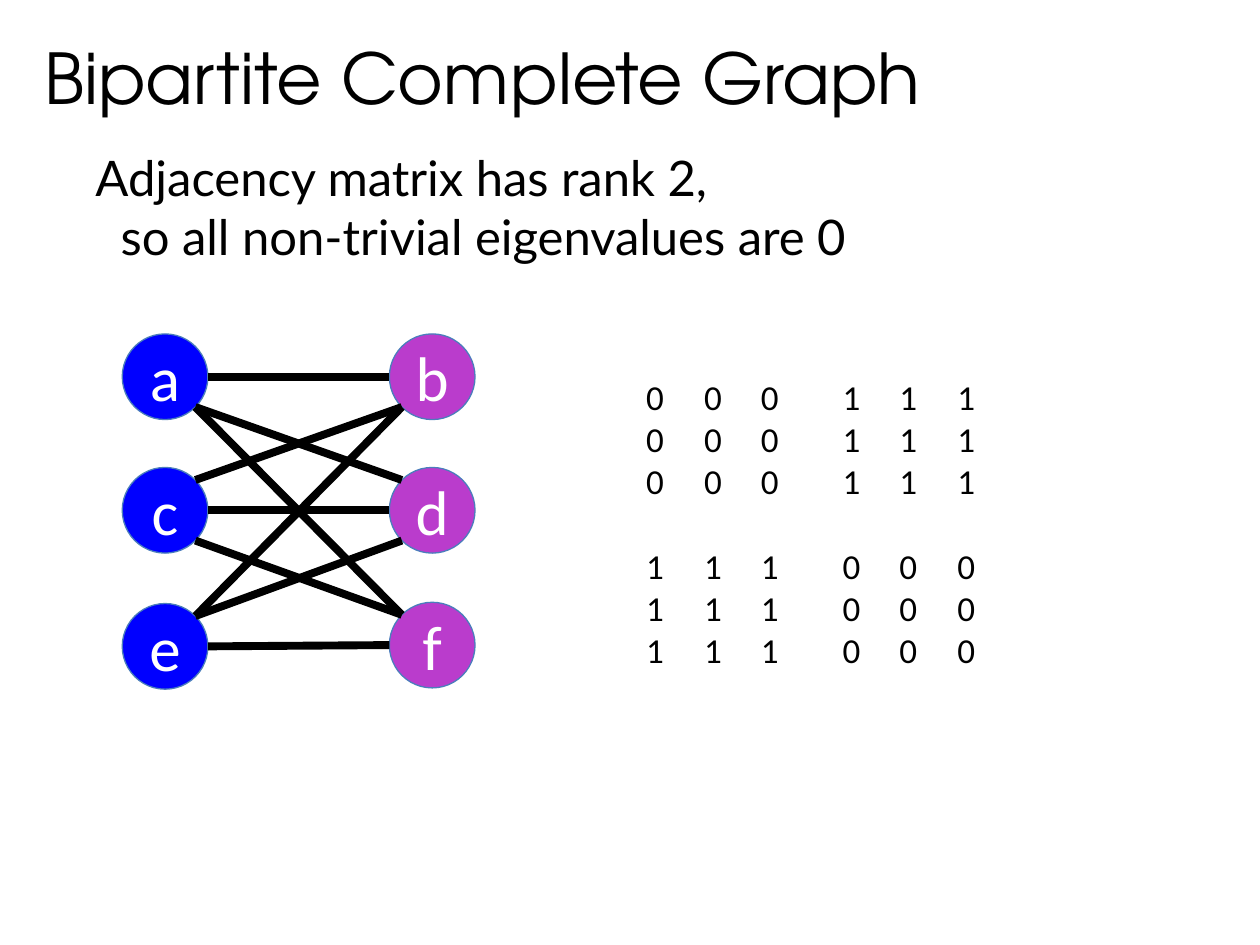
from dataclasses import dataclass
from itertools import product
from math import copysign, sqrt

from lxml.etree import SubElement
from pptx import Presentation
from pptx.dml.color import RGBColor
from pptx.enum.shapes import MSO_CONNECTOR, MSO_SHAPE
from pptx.enum.text import MSO_ANCHOR, MSO_AUTO_SIZE, PP_ALIGN
from pptx.oxml.ns import qn
from pptx.util import Inches, Pt

BLACK, WHITE, OUTLINE = "000000", "FFFFFF", "4B7EBC"
BLUE, PURPLE = "0000FF", "BA3CCC"
RADIUS = 0.34
MATRIX_STOPS = (0.31, 0.77, 1.22, 1.87, 2.32, 2.78)
MATRIX_LINE = 24.4


@dataclass(frozen=True)
class Node:
    label: str
    x: float
    y: float
    color: str


LEFT_NODES = [Node(label, 1.31, y, BLUE)
              for label, y in zip("ace", (2.99, 4.05, 5.13))]
RIGHT_NODES = [Node(label, 3.43, y, PURPLE)
               for label, y in zip("bdf", (2.99, 4.05, 5.12))]


def rgb(color: str) -> RGBColor:
    """Turn a hex string into a colour."""
    return RGBColor.from_string(color)


def style(paragraph, font: str, size: float, color: str = BLACK) -> None:
    """Set the font of a whole paragraph."""
    paragraph.font.name = font
    paragraph.font.size = Pt(size)
    paragraph.font.color.rgb = rgb(color)


def place(shape, left: float, top: float, width: float, height: float) -> None:
    """Move and size a shape."""
    shape.left, shape.top = Inches(left), Inches(top)
    shape.width, shape.height = Inches(width), Inches(height)


def add_title(slide, wording: str) -> None:
    """Fill and format the title placeholder."""
    title = slide.shapes.title
    place(title, 0.25, 0.22, 7.17, 0.77)
    frame = title.text_frame
    frame.text = wording
    frame.word_wrap = False
    frame.auto_size = MSO_AUTO_SIZE.SHAPE_TO_FIT_TEXT
    frame.vertical_anchor = MSO_ANCHOR.TOP
    frame.paragraphs[0].alignment = PP_ALIGN.LEFT
    style(frame.paragraphs[0], "TeX Gyre Adventor", 40)


def add_lines(slide, lines: list[str], box: tuple, font: str, size: float,
              wrap: bool) -> list:
    """Add a text box with one paragraph per line and return the paragraphs."""
    frame = slide.shapes.add_textbox(*map(Inches, box)).text_frame
    frame.word_wrap = wrap
    frame.auto_size = MSO_AUTO_SIZE.SHAPE_TO_FIT_TEXT
    frame.text = "\n".join(lines)
    for paragraph in frame.paragraphs:
        style(paragraph, font, size)
    return list(frame.paragraphs)


def add_statement(slide) -> None:
    """Add the rank statement with its second line indented."""
    lines = ["Adjacency matrix has rank 2,",
             "so all non-trivial eigenvalues are 0"]
    paragraphs = add_lines(slide, lines, (0.66, 1.12, 6.34, 1.04), "Lato", 28, False)
    paragraphs[1]._p.get_or_add_pPr().set("marL", str(Inches(0.2)))


def add_matrix(slide) -> None:
    """Add the block adjacency matrix on tab stops."""
    side = len(LEFT_NODES)
    size = 2 * side
    rows = ["".join(f"\t{int((row < side) != (column < side))}"
                    for column in range(size)) for row in range(size)]
    paragraphs = add_lines(slide, rows, (4.72, 2.93, 4.16, 2.45), "Calibri", 20, True)
    paragraphs[side].space_before = Pt(MATRIX_LINE)
    for paragraph in paragraphs:
        properties = paragraph._p.get_or_add_pPr()
        stops = SubElement(properties, qn("a:tabLst"))
        properties.insert_element_before(stops, "a:defRPr", "a:extLst")
        for position in MATRIX_STOPS:
            SubElement(stops, qn("a:tab"), pos=str(Inches(position)), algn="l")


def add_node(slide, node: Node) -> None:
    """Draw a labelled graph node."""
    circle = slide.shapes.add_shape(
        MSO_SHAPE.OVAL, Inches(node.x - RADIUS), Inches(node.y - RADIUS),
        Inches(2 * RADIUS), Inches(2 * RADIUS))
    circle.shadow.inherit = False
    circle.fill.solid()
    circle.fill.fore_color.rgb = rgb(node.color)
    circle.line.color.rgb = rgb(OUTLINE)
    circle.line.width = Pt(0.75)
    frame = circle.text_frame
    frame.text = node.label
    frame.vertical_anchor = MSO_ANCHOR.MIDDLE
    frame.paragraphs[0].alignment = PP_ALIGN.CENTER
    style(frame.paragraphs[0], "Calibri", 36, WHITE)


def add_edge(slide, start: Node, end: Node) -> None:
    """Join two nodes at their sides when level, else at their diagonals."""
    rise = end.y - start.y
    level = abs(rise) < RADIUS
    across = RADIUS if level else RADIUS / sqrt(2)
    down = 0 if level else copysign(across, rise)
    edge = slide.shapes.add_connector(
        MSO_CONNECTOR.STRAIGHT,
        Inches(start.x + across), Inches(start.y + down),
        Inches(end.x - across), Inches(end.y - down))
    edge.line.color.rgb = rgb(BLACK)
    edge.line.width = Pt(4.5)
    SubElement(edge._element.spPr, qn("a:effectLst"))


def main() -> None:
    """Build the bipartite graph slide."""
    deck = Presentation()
    deck.slide_width, deck.slide_height = Inches(10), Inches(7.5)
    slide = deck.slides.add_slide(deck.slide_layouts[5])
    add_title(slide, "Bipartite Complete Graph")
    add_statement(slide)
    for node in LEFT_NODES + RIGHT_NODES:
        add_node(slide, node)
    for start, end in product(LEFT_NODES, RIGHT_NODES):
        add_edge(slide, start, end)
    add_matrix(slide)
    deck.save("out.pptx")


if __name__ == "__main__":
    main()
